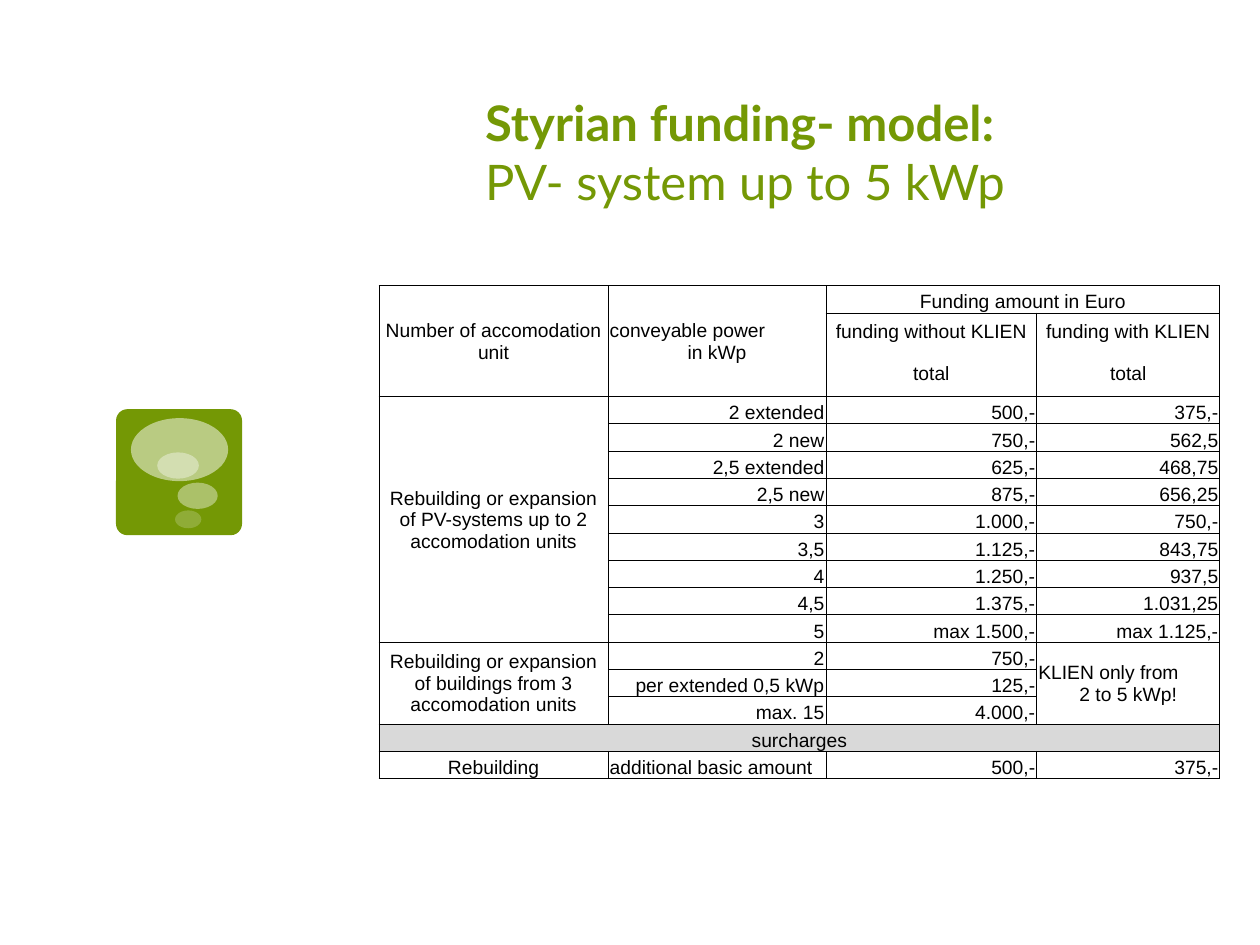
from lxml.etree import SubElement
from pptx import Presentation
from pptx.dml.color import RGBColor
from pptx.enum.shapes import MSO_SHAPE
from pptx.enum.text import MSO_ANCHOR, PP_ALIGN
from pptx.oxml.ns import qn
from pptx.util import Cm, Pt

COLORS = {"green": "749805", "white": "FFFFFF", "black": "000000", "grey": "D9D9D9"}

TITLE = ["Styrian funding- model:", "PV- system up to 5 kWp"]

ROWS = [
    ["Number of accomodation unit", "conveyable power\nin kWp", "Funding amount in Euro", ""],
    ["", "", "funding without KLIEN", "funding with KLIEN"],
    ["", "", "total", "total"],
    ["Rebuilding or expansion of PV-systems up to 2 accomodation units",
     "2 extended", "500,-", "375,-"],
    ["", "2 new", "750,-", "562,5"],
    ["", "2,5 extended", "625,-", "468,75"],
    ["", "2,5 new", "875,-", "656,25"],
    ["", "3", "1.000,-", "750,-"],
    ["", "3,5", "1.125,-", "843,75"],
    ["", "4", "1.250,-", "937,5"],
    ["", "4,5", "1.375,-", "1.031,25"],
    ["", "5", "max 1.500,-", "max 1.125,-"],
    ["Rebuilding or expansion of buildings from 3 accomodation units",
     "2", "750,-", "KLIEN only from\n2 to 5 kWp!"],
    ["", "per extended 0,5 kWp", "125,-", ""],
    ["", "max. 15", "4.000,-", ""],
    ["surcharges", "", "", ""],
    ["Rebuilding", "additional basic amount", "500,-", "375,-"],
]
SPANS = {(0, 0): (3, 1), (0, 1): (3, 1), (0, 2): (1, 2), (3, 0): (9, 1),
         (12, 0): (3, 1), (12, 3): (3, 1), (15, 0): (1, 4)}
COL_WIDTHS = [4.62, 4.39, 4.25, 3.69]
ROW_HEIGHT, SUBHEAD_HEIGHT = 0.55, 0.72
SUBHEAD_ROWS = (1, 2)
SURCHARGE_ROW, LAST_ROW = 15, 16

BUBBLES = [
    (2.64, 8.43, 1.96, 1.27, 50),
    (3.58, 9.73, 0.81, 0.53, 40),
    (3.53, 10.29, 0.53, 0.36, 20),
    (3.17, 9.12, 0.84, 0.53, 38),
]


def rgb(name):
    return RGBColor.from_string(COLORS[name])


def add_plain(slide, kind, x, y, w, h, color):
    sp = slide.shapes.add_shape(kind, Cm(x), Cm(y), Cm(w), Cm(h))
    sp.shadow.inherit = False
    sp.fill.solid()
    sp.fill.fore_color.rgb = rgb(color)
    sp.line.fill.background()
    return sp


def add_emblem(slide):
    sp = add_plain(slide, MSO_SHAPE.ROUNDED_RECTANGLE, 2.34, 8.25, 2.54, 2.54, "green")
    sp.adjustments[0] = 0.09
    for x, y, w, h, opacity in BUBBLES:
        sp = add_plain(slide, MSO_SHAPE.OVAL, x, y, w, h, "white")
        clr = sp.fill._xPr.find(".//" + qn("a:srgbClr"))
        SubElement(clr, qn("a:alpha"), val=str(opacity * 1000))


def add_title(slide):
    sp = slide.shapes.add_textbox(Cm(9.53), Cm(1.9), Cm(13.74), Cm(2.46))
    tf = sp.text_frame
    tf.word_wrap = True
    tf.vertical_anchor = MSO_ANCHOR.BOTTOM
    p = tf.paragraphs[0]
    p.text = "\v".join(TITLE)
    for r, bold in zip(p.runs, (True, False)):
        r.font.name, r.font.size, r.font.bold = "Lato", Pt(28), bold
        r.font.color.rgb = rgb("green")


def set_borders(cell, hidden):
    tc_pr = cell._tc.get_or_add_tcPr()
    for side in "LRTB":
        ln = SubElement(tc_pr, qn(f"a:ln{side}"), w=str(Pt(0.5)))
        if side == hidden:
            SubElement(ln, qn("a:noFill"))
        else:
            fill = SubElement(ln, qn("a:solidFill"))
            SubElement(fill, qn("a:srgbClr"), val=COLORS["black"])


def alignment(row, col):
    if row < 3 or col == 0:
        return PP_ALIGN.CENTER
    return PP_ALIGN.LEFT if (row, col) == (LAST_ROW, 1) else PP_ALIGN.RIGHT


def fill_cell(cell, row, col, text):
    hidden = {1: "B", 2: "T"}.get(row) if col >= 2 else None
    set_borders(cell, hidden)
    if row == SURCHARGE_ROW:
        cell.fill.solid()
        cell.fill.fore_color.rgb = rgb("grey")
    else:
        cell.fill.background()
    cell.margin_left = cell.margin_right = cell.margin_top = Cm(0.03)
    cell.margin_bottom = 0
    tall = SPANS.get((row, col), (1, 1))[0] > 1
    middle = tall or row in SUBHEAD_ROWS
    cell.vertical_anchor = MSO_ANCHOR.MIDDLE if middle else MSO_ANCHOR.BOTTOM
    tf = cell.text_frame
    tf.text = text
    for p in tf.paragraphs:
        p.alignment = alignment(row, col)
        for r in p.runs:
            r.font.name, r.font.size = "Arial", Pt(11)
            r.font.color.rgb = rgb("black")
    if len(tf.paragraphs) == 2:
        tf.paragraphs[0].alignment = PP_ALIGN.LEFT
        tf.paragraphs[1].alignment = PP_ALIGN.CENTER


def add_funding_table(slide):
    heights = [SUBHEAD_HEIGHT if i in SUBHEAD_ROWS else ROW_HEIGHT for i in range(len(ROWS))]
    table = slide.shapes.add_table(len(ROWS), len(COL_WIDTHS), Cm(7.64), Cm(5.76),
                                   Cm(sum(COL_WIDTHS)), Cm(sum(heights))).table
    table.first_row = table.horz_banding = False
    for column, width in zip(table.columns, COL_WIDTHS):
        column.width = Cm(width)
    for row, height in zip(table.rows, heights):
        row.height = Cm(height)
    for i, texts in enumerate(ROWS):
        for j, text in enumerate(texts):
            fill_cell(table.cell(i, j), i, j, text)
    for (i, j), (down, across) in SPANS.items():
        table.cell(i, j).merge(table.cell(i + down - 1, j + across - 1))


def main():
    prs = Presentation()
    prs.slide_width, prs.slide_height = Cm(25.4), Cm(19.05)
    slide = prs.slides.add_slide(prs.slide_layouts[6])
    add_emblem(slide)
    add_title(slide)
    add_funding_table(slide)
    prs.save("out.pptx")


if __name__ == "__main__":
    main()
